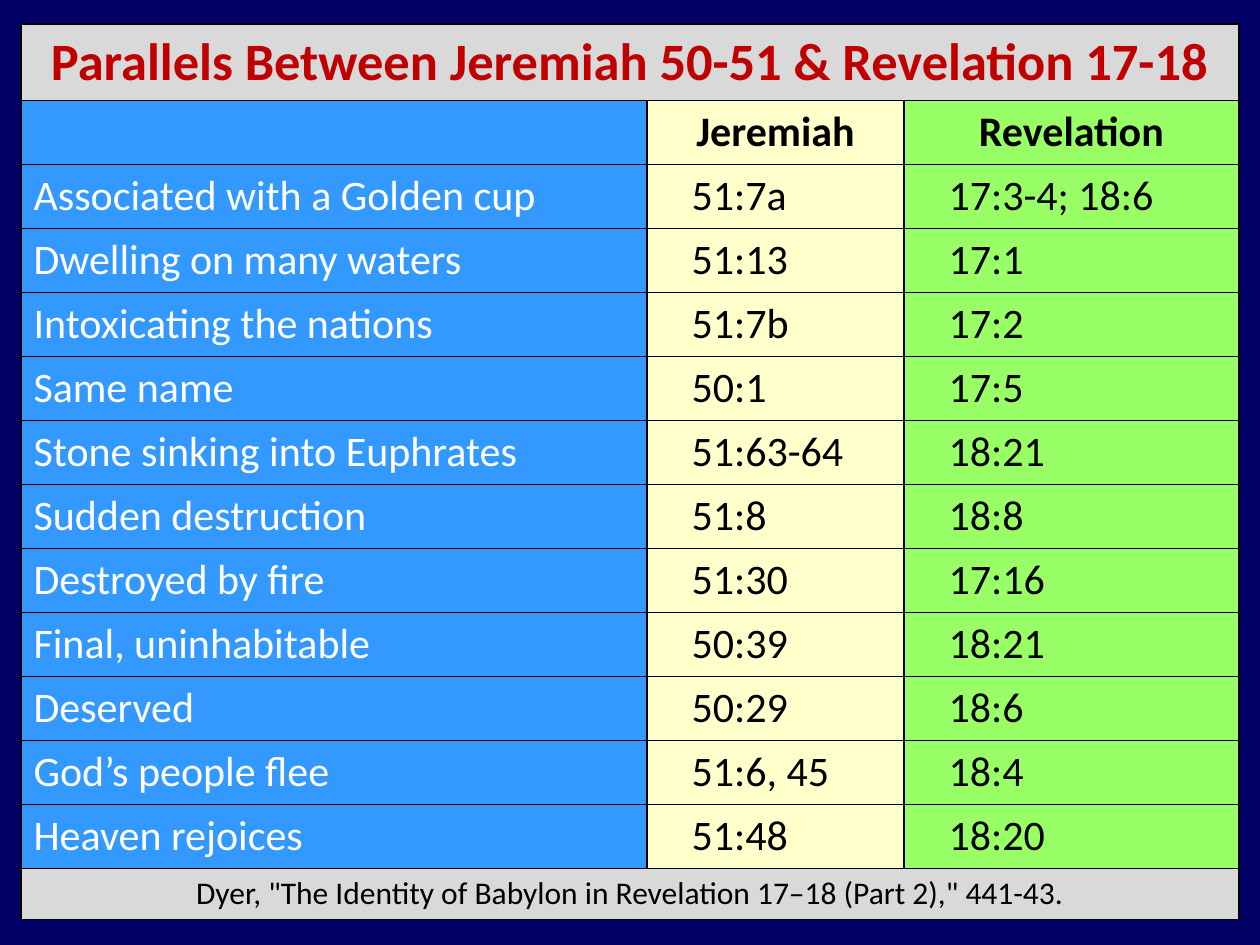
from typing import NamedTuple

from lxml import etree
from pptx import Presentation, util as u
from pptx.dml.color import RGBColor
from pptx.enum import text
from pptx.oxml.ns import qn

PX_PER_INCH = 126
FONT = "Calibri"
COLORS = {
    "navy": "000066", "gray": "D9D9D9", "blue": "3399FF", "cream": "FFFFCC",
    "green": "99FF66", "red": "C00000", "black": "000000", "white": "FFFFFF",
}


class Column(NamedTuple):
    heading: str
    width: int
    fill: str
    color: str
    indent: int


class Parallel(NamedTuple):
    theme: str
    jeremiah: str
    revelation: str


TITLE = "Parallels Between Jeremiah 50-51 & Revelation 17-18"
CITATION = 'Dyer, "The Identity of Babylon in Revelation 17–18 (Part 2)," 441-43.'
COLUMNS = [
    Column("", 626, "blue", "white", 0),
    Column("Jeremiah", 257, "cream", "black", 32),
    Column("Revelation", 335, "green", "black", 32),
]
PARALLELS = [
    Parallel("Associated with a Golden cup", "51:7a", "17:3-4; 18:6"),
    Parallel("Dwelling on many waters", "51:13", "17:1"),
    Parallel("Intoxicating the nations", "51:7b", "17:2"),
    Parallel("Same name", "50:1", "17:5"),
    Parallel("Stone sinking into Euphrates", "51:63-64", "18:21"),
    Parallel("Sudden destruction", "51:8", "18:8"),
    Parallel("Destroyed by fire", "51:30", "17:16"),
    Parallel("Final, uninhabitable", "50:39", "18:21"),
    Parallel("Deserved", "50:29", "18:6"),
    Parallel("God’s people flee", "51:6, 45", "18:4"),
    Parallel("Heaven rejoices", "51:48", "18:20"),
]
LEFT, TOP = 21, 24
TITLE_HEIGHT, ROW_HEIGHT, CITATION_HEIGHT = 76, 64, 51


def px(n: int) -> u.Emu:
    return u.Emu(round(n * u.Inches(1) / PX_PER_INCH))


def rgb(name: str) -> RGBColor:
    return RGBColor.from_string(COLORS[name])


def add_borders(cell, color: str = "black", width: float = 1) -> None:
    tcPr = cell._tc.get_or_add_tcPr()
    for side in ("lnL", "lnR", "lnT", "lnB"):
        ln = etree.SubElement(tcPr, qn(f"a:{side}"), w=str(u.Pt(width)))
        fill = etree.SubElement(ln, qn("a:solidFill"))
        etree.SubElement(fill, qn("a:srgbClr"), val=COLORS[color])


def write(cell, content: str, *, size: int = 24, color: str = "black",
          bold: bool = False, centered: bool = False, indent: int = 0) -> None:
    p = cell.text_frame.paragraphs[0]
    p.alignment = text.PP_ALIGN.CENTER if centered else text.PP_ALIGN.LEFT
    if indent:
        p._p.get_or_add_pPr().set("marL", str(px(indent)))
        p._p.get_or_add_pPr().set("indent", "0")
    if content:
        r = p.add_run()
        r.text = content
        r.font.name, r.font.size, r.font.bold = FONT, u.Pt(size), bold
        r.font.color.rgb = rgb(color)


def style_cell(cell, fill: str) -> None:
    add_borders(cell)
    cell.fill.solid()
    cell.fill.fore_color.rgb = rgb(fill)


def add_band(table, row: int, content: str, **fmt) -> None:
    """Fill one row with a single cell spanning every column."""
    last = len(COLUMNS) - 1
    for i in range(last + 1):
        style_cell(table.cell(row, i), "gray")
    table.cell(row, 0).merge(table.cell(row, last))
    write(table.cell(row, 0), content, centered=True, **fmt)


def add_parallels_table(slide) -> None:
    heights = [TITLE_HEIGHT] + [ROW_HEIGHT] * (len(PARALLELS) + 1) + [CITATION_HEIGHT]
    width = sum(c.width for c in COLUMNS)
    table = slide.shapes.add_table(len(heights), len(COLUMNS), px(LEFT), px(TOP),
                                   px(width), px(sum(heights))).table
    table.first_row = table.horz_banding = False
    for row, height in zip(table.rows, heights):
        row.height = px(height)

    add_band(table, 0, TITLE, size=30, color="red", bold=True)
    for i, column in enumerate(COLUMNS):
        table.columns[i].width = px(column.width)
        heading = table.cell(1, i)
        style_cell(heading, column.fill)
        write(heading, column.heading, bold=True, centered=True)
        for j, parallel in enumerate(PARALLELS, start=2):
            cell = table.cell(j, i)
            style_cell(cell, column.fill)
            write(cell, parallel[i], color=column.color, indent=column.indent)
    add_band(table, len(heights) - 1, CITATION, size=18)


def main() -> None:
    prs = Presentation()
    prs.slide_width, prs.slide_height = u.Inches(10), u.Inches(7.5)
    slide = prs.slides.add_slide(prs.slide_layouts[6])
    slide.background.fill.solid()
    slide.background.fill.fore_color.rgb = rgb("navy")
    add_parallels_table(slide)
    prs.save("out.pptx")


if __name__ == "__main__":
    main()
